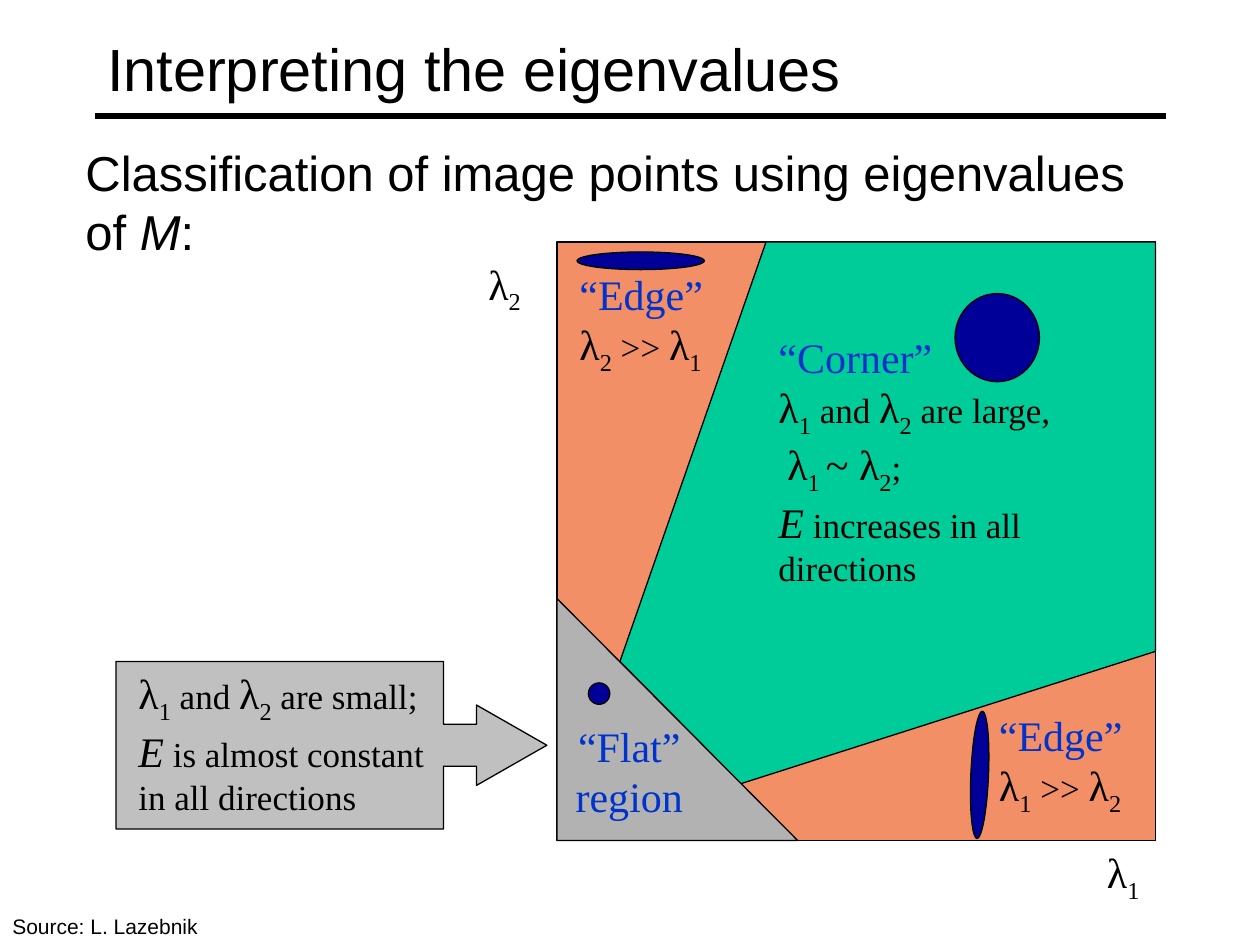
from pptx import Presentation
from pptx.dml.color import RGBColor
from pptx.enum import shapes, text
from pptx.oxml import ns
from pptx.util import Pt
from lxml import etree

PX = 9144
BLACK, WHITE, BLUE, NAVY = "000000", "FFFFFF", "0033CC", "000099"
ORANGE, GREEN, GRAY, SILVER = "F38F67", "00CC99", "B2B2B2", "C0C0C0"
SHAPE = shapes.MSO_SHAPE
BREAK = None


def rgb(value):
    return RGBColor.from_string(value)


def span(words, size=24, color=BLACK, font="Times New Roman", italic=False, sub=False):
    return dict(words=words, size=size, color=color, font=font, italic=italic, sub=sub)


def small(words):
    return span(words, size=20)


def eigen(index):
    return [span("λ"), span(index, sub=True)]


def energy(words):
    return [span("E", italic=True), small(words)]


def edge(larger, smaller):
    return [span("“Edge” ", color=BLUE), BREAK, *eigen(larger), small(" >> "), *eigen(smaller)]


class Page:
    def __init__(self, deck):
        self.slide = deck.slides.add_slide(deck.slide_layouts[5])
        self.items = self.slide.shapes

    def fill_text(self, frame, spans, align=text.PP_ALIGN.LEFT):
        frame.word_wrap = True
        para = frame.paragraphs[0]
        para.alignment = align
        for item in spans:
            if item is BREAK:
                para.add_line_break()
                continue
            run = para.add_run()
            run.text = item["words"]
            run.font.name = item["font"]
            run.font.size = Pt(item["size"])
            run.font.italic = item["italic"]
            run.font.color.rgb = rgb(item["color"])
            if item["sub"]:
                run._r.get_or_add_rPr().set("baseline", "-25000")

    def title(self, words, left, top, width, height):
        box = self.items.title
        box.left, box.top, box.width, box.height = (v * PX for v in (left, top, width, height))
        box.text_frame.vertical_anchor = text.MSO_ANCHOR.MIDDLE
        self.fill_text(box.text_frame, [span(words, size=34, font="Arial")])

    def label(self, spans, left, top, width, height, align=text.PP_ALIGN.LEFT, fill=None):
        box = self.items.add_textbox(left * PX, top * PX, width * PX, height * PX)
        box.text_frame.auto_size = text.MSO_AUTO_SIZE.SHAPE_TO_FIT_TEXT
        if fill:
            box.fill.solid()
            box.fill.fore_color.rgb = rgb(fill)
        self.fill_text(box.text_frame, spans, align)

    def paint(self, shape, fill):
        shape.shadow.inherit = False
        shape.fill.solid()
        shape.fill.fore_color.rgb = rgb(fill)
        shape.line.color.rgb = rgb(BLACK)
        shape.line.width = Pt(0.75)

    def shape(self, kind, fill, left, top, width, height, turn=0, adjust=()):
        shape = self.items.add_shape(kind, left * PX, top * PX, width * PX, height * PX)
        for index, value in enumerate(adjust):
            shape.adjustments[index] = value
        shape.rotation = turn
        self.paint(shape, fill)

    def region(self, points, fill):
        builder = self.items.build_freeform(*points[0], scale=PX)
        builder.add_line_segments(points[1:], close=True)
        self.paint(builder.convert_to_shape(), fill)

    def rule(self, left, right, y):
        line = self.items.add_connector(
            shapes.MSO_CONNECTOR.STRAIGHT, left * PX, y * PX, right * PX, y * PX)
        line.line.color.rgb = rgb(BLACK)
        line.line.width = Pt(3)
        etree.SubElement(line._element.spPr, ns.qn("a:effectLst"))


def main():
    deck = Presentation()
    deck.slide_width, deck.slide_height = 1000 * PX, 750 * PX
    page = Page(deck)
    center = text.PP_ALIGN.CENTER

    page.rule(75, 925, 92)
    page.title("Interpreting the eigenvalues", 75, 8, 850, 92)

    page.shape(SHAPE.RIGHT_ARROW_CALLOUT, SILVER, 92, 525, 342, 133,
               adjust=(0.25, 0.24, 0.42, 0.76))
    page.shape(SHAPE.RECTANGLE, ORANGE, 442, 192, 475, 475)
    page.region([(492, 525), (608, 192), (917, 192), (917, 517), (588, 622)], GREEN)
    page.shape(SHAPE.RIGHT_TRIANGLE, GRAY, 442, 475, 191, 192)

    page.label(eigen("1"), 850, 667, 83, 50, center)
    page.label(eigen("2"), 342, 200, 117, 50, center)
    page.label([span("“Corner”", color=BLUE), BREAK,
                *eigen("1"), small(" and "), *eigen("2"), small(" are large,"), BREAK,
                small(" "), *eigen("1 "), span("~ "), *eigen("2"), small(";"), BREAK,
                *energy(" increases in all directions")], 608, 258, 292, 203)
    page.label([*eigen("1"), small(" and "), *eigen("2"), small(" are small;"), BREAK,
                *energy(" is almost constant in all directions")], 100, 525, 258, 123)
    page.label(edge("1", "2"), 783, 558, 142, 90)
    page.label(edge("2", "1"), 450, 208, 142, 90)
    page.label([span("“Flat” region", color=BLUE)], 433, 567, 133, 90, center)
    page.label([span("Classification of image points using eigenvalues of ", size=28, font="Arial"),
                span("M", size=28, font="Arial", italic=True),
                span(":", size=28, font="Arial")], 58, 108, 875, 103)

    page.shape(SHAPE.OVAL, NAVY, 758, 233, 67, 70)
    page.shape(SHAPE.OVAL, NAVY, 458, 200, 101, 14)
    page.shape(SHAPE.OVAL, NAVY, 467, 542, 17, 17)
    page.shape(SHAPE.OVAL, NAVY, 727, 608, 101, 14, turn=92.4)

    page.label([span("Source: L. Lazebnik", size=12, font="Arial")], 0, 720, 193, 30, fill=WHITE)
    deck.save("out.pptx")


if __name__ == "__main__":
    main()
